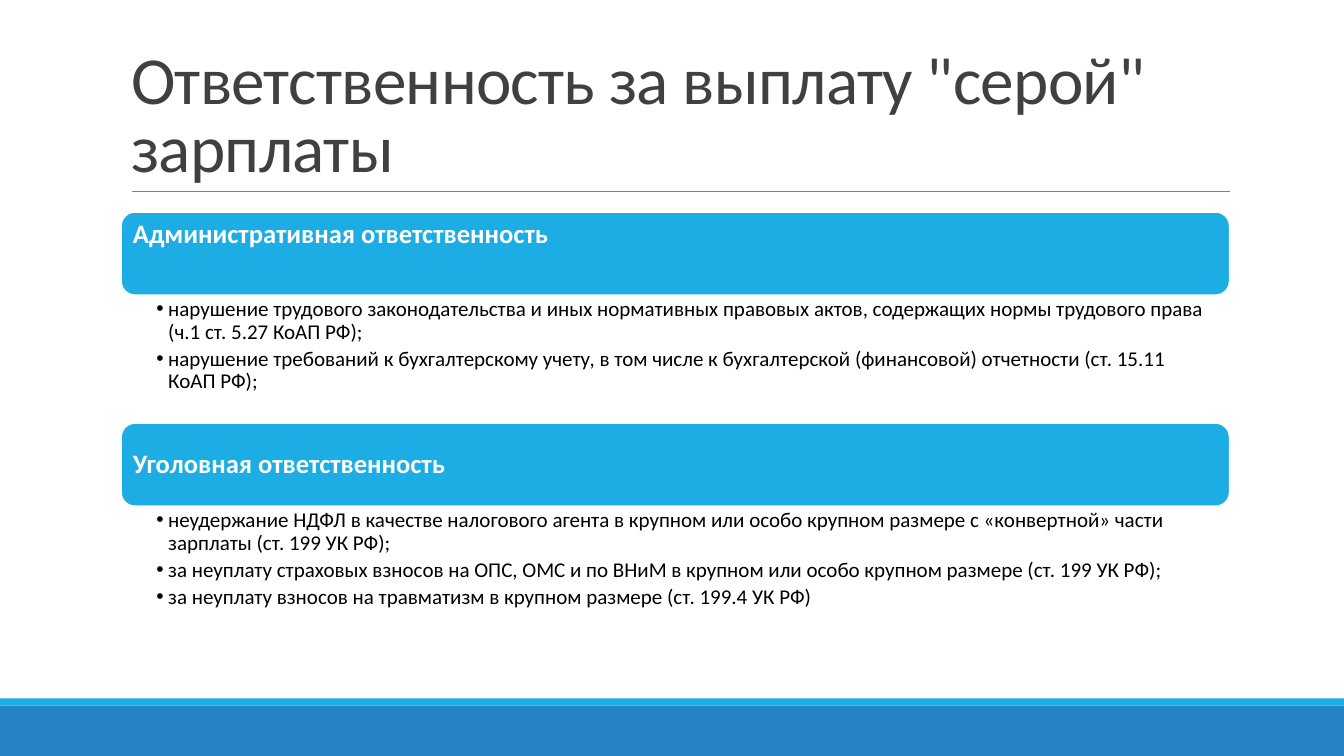
from pptx import Presentation
from pptx.dml.color import RGBColor
from pptx.enum.shapes import MSO_CONNECTOR, MSO_SHAPE
from pptx.enum.text import MSO_ANCHOR, MSO_AUTO_SIZE, PP_ALIGN
from pptx.oxml.ns import qn
from pptx.util import Cm, Pt
from lxml.etree import SubElement


def rgb(value):
    return RGBColor.from_string(value)


def style(p, size, color, bold, spacing, after):
    p.alignment = PP_ALIGN.LEFT
    p.line_spacing = spacing
    p.space_before = Pt(0)
    p.space_after = Pt(after)
    for r in p.runs:
        r.font.name = "Calibri"
        r.font.size = Pt(size)
        r.font.bold = bold
        r.font.color.rgb = rgb(color)


LEFT, WIDTH = Cm(3.05), Cm(27.94)
SECTIONS = [
    ("Административная ответственность", 1, 0.95, [
        "нарушение трудового законодательства и иных нормативных правовых актов, "
        "содержащих нормы трудового права (ч.1 ст. 5.27 КоАП РФ);",
        "нарушение требований к бухгалтерскому учету, в том числе к бухгалтерской "
        "(финансовой) отчетности (ст. 15.11 КоАП РФ);",
    ]),
    ("Уголовная ответственность", 2, 0, [
        "неудержание НДФЛ в качестве налогового агента в крупном или особо крупном "
        "размере с «конвертной» части зарплаты (ст. 199 УК РФ);",
        "за неуплату страховых взносов на ОПС, ОМС и по ВНиМ в крупном или особо "
        "крупном размере (ст. 199 УК РФ);",
        "за неуплату взносов на травматизм в крупном размере (ст. 199.4 УК РФ)",
    ]),
]

prs = Presentation()
prs.slide_width, prs.slide_height = Cm(33.87), Cm(19.05)
s = prs.slides.add_slide(prs.slide_layouts[3])

for top, height, color in [(17.78, 1.27, "2683C6"), (17.6, 0.18, "1CADE4")]:
    sp = s.shapes.add_shape(MSO_SHAPE.RECTANGLE, 0, Cm(top), prs.slide_width, Cm(height))
    sp.shadow.inherit = False
    sp.fill.solid()
    sp.fill.fore_color.rgb = rgb(color)
    sp.line.fill.background()

rule = s.shapes.add_connector(MSO_CONNECTOR.STRAIGHT, Cm(3.33), Cm(4.83), Cm(31), Cm(4.83))
rule.line.color.rgb = rgb("808080")
rule.line.width = Pt(0.5)
SubElement(rule._element.spPr, qn("a:effectLst"))

title = s.shapes.title
title.left, title.top, title.width, title.height = LEFT, Cm(0.79), WIDTH, Cm(4.04)
tf = title.text_frame
tf.text = 'Ответственность за выплату "серой" зарплаты'
tf.auto_size = MSO_AUTO_SIZE.NONE
tf.vertical_anchor = MSO_ANCHOR.BOTTOM
style(tf.paragraphs[0], 48, "404040", False, 0.85, 0)
tf.paragraphs[0].runs[0].font._element.set("spc", "-50")

for i, (heading, idx, raise_by, items) in enumerate(SECTIONS):
    top = 5.34 + i * 5.32
    bar = s.shapes.add_shape(MSO_SHAPE.ROUNDED_RECTANGLE, LEFT, Cm(top), WIDTH, Cm(2.1))
    bar.shadow.inherit = False
    bar.fill.solid()
    bar.fill.fore_color.rgb = rgb("1CADE4")
    bar.line.color.rgb = rgb("FFFFFF")
    bar.line.width = Pt(1.25)
    tf = bar.text_frame
    tf.text = heading
    tf.vertical_anchor = MSO_ANCHOR.MIDDLE
    tf.margin_left = tf.margin_right = Cm(0.2)
    tf.margin_top, tf.margin_bottom = Cm(0), Cm(raise_by)
    style(tf.paragraphs[0], 19, "FFFFFF", True, 0.9, 0)

    body = s.placeholders[idx]
    body.left, body.top, body.width, body.height = LEFT, Cm(top + 2.1), WIDTH, Cm(3.3)
    tf = body.text_frame
    tf.text = "\n".join(items)
    tf.auto_size = MSO_AUTO_SIZE.NONE
    tf.vertical_anchor = MSO_ANCHOR.TOP
    tf.margin_left, tf.margin_right = Cm(0.89), Cm(0.38)
    tf.margin_top = tf.margin_bottom = Cm(0.08)
    for p in tf.paragraphs:
        style(p, 15, "000000", False, 0.9, 3)
        pPr = p._p.get_or_add_pPr()
        pPr.set("marL", str(Cm(0.3)))
        pPr.set("indent", str(Cm(-0.3)))

prs.save("out.pptx")
